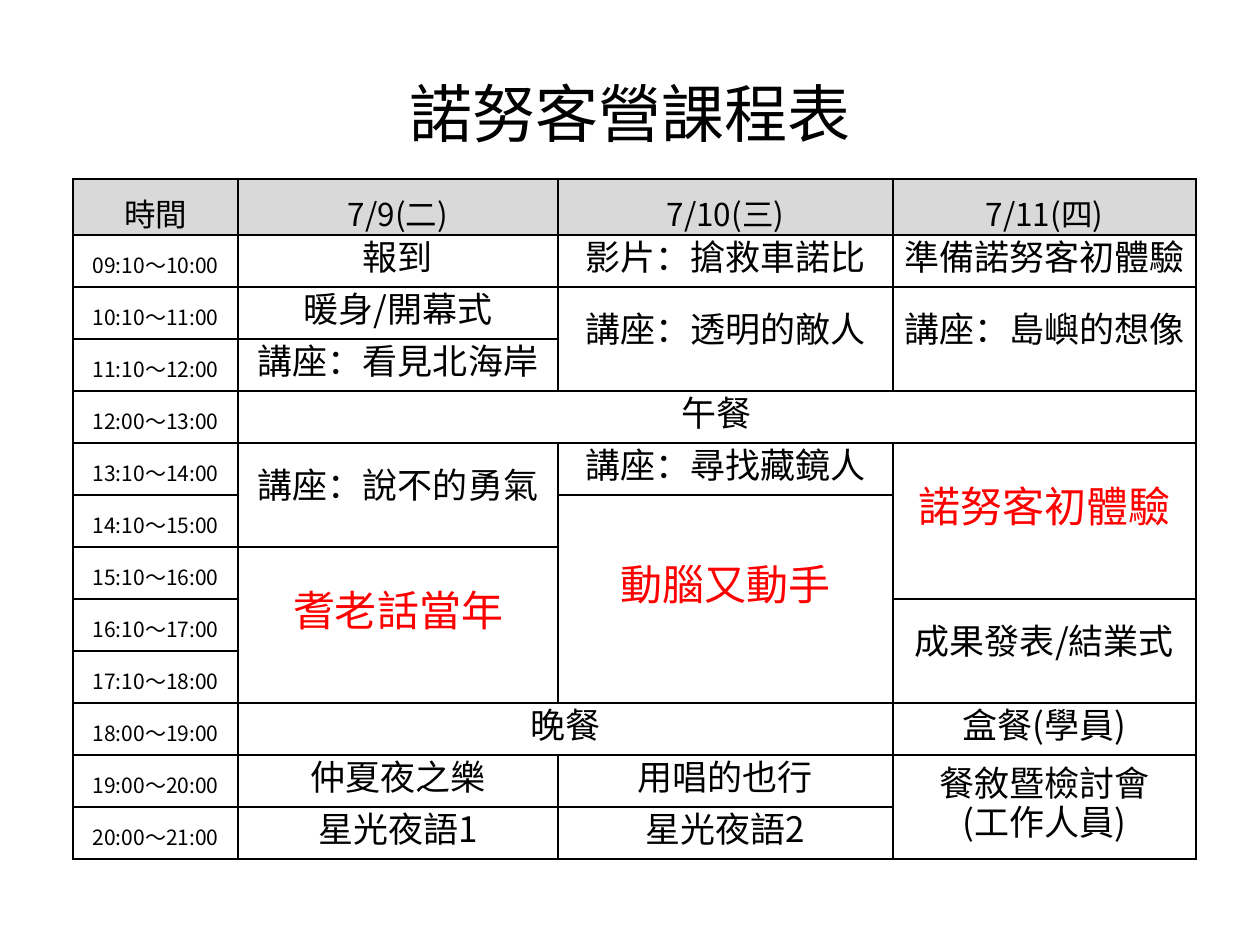
from lxml.etree import SubElement
from pptx import Presentation
from pptx.dml.color import RGBColor
from pptx.enum.text import MSO_ANCHOR, MSO_AUTO_SIZE, PP_ALIGN
from pptx.oxml import parse_xml
from pptx.oxml.ns import nsdecls, qn
from pptx.util import Pt

SCALE = 914400 / 126
BLACK = RGBColor(0, 0, 0)
RED = RGBColor(255, 0, 0)
GRAY = RGBColor(0xD9, 0xD9, 0xD9)
NOTO = "Noto Sans CJK SC"
CAL = "Calibri"

COLS = [165, 320, 335, 303]
ROWS = [56] + [52] * 12
THICK_COLS = {0, 1, len(COLS)}
THICK_ROWS = {0, 1, len(ROWS)}

HEADS = ["時間", "7/9(二)", "7/10(三)", "7/11(四)"]
TIMES = [
    "09:10～10:00", "10:10～11:00", "11:10～12:00", "12:00～13:00",
    "13:10～14:00", "14:10～15:00", "15:10～16:00", "16:10～17:00",
    "17:10～18:00", "18:00～19:00", "19:00～20:00", "20:00～21:00",
]
# row, column, rows spanned, columns spanned, line pitch, text ("|" parts runs)
EVENTS = [
    (1, 1, 1, 1, 23, "報到"),
    (1, 2, 1, 1, 23, "影片：搶救車諾比"),
    (1, 3, 1, 1, 23, "準備諾努客初體驗"),
    (2, 1, 1, 1, 22, "暖身|/|開幕式"),
    (2, 2, 2, 1, 16, "講座：透明的敵人"),
    (2, 3, 2, 1, 16, "講座：島嶼的想像"),
    (3, 1, 1, 1, 22, "講座：看見北海岸"),
    (4, 1, 1, 3, 23, "午餐"),
    (5, 1, 2, 1, 16, "講座：說不的勇氣"),
    (5, 2, 1, 1, 23, "講座：尋找藏鏡人"),
    (5, 3, 3, 1, 16, "諾努客初體驗"),
    (6, 2, 4, 1, 16, "動腦又動手"),
    (7, 1, 3, 1, 16, "耆老話當年"),
    (8, 3, 2, 1, 16, "成果發表|/|結業式"),
    (10, 1, 1, 2, 23, "晚餐"),
    (10, 3, 1, 1, 23, "盒餐(學員)"),
    (11, 1, 1, 1, 23, "仲夏夜之樂"),
    (11, 2, 1, 1, 23, "用唱的也行"),
    (11, 3, 2, 1, 22, "餐敘暨檢討會\n(工作人員)"),
    (12, 1, 1, 1, 23, "星光夜語1"),
    (12, 2, 1, 1, 23, "星光夜語2"),
]
MAIN = {"諾努客初體驗", "動腦又動手", "耆老話當年"}


def px(n):
    return round(n * SCALE)


def add_run(para, text, size, face, color):
    run = para.add_run()
    run.text = text
    font = run.font
    font.size = Pt(size)
    font.name = face
    font.color.rgb = color
    SubElement(font._element, qn("a:ea")).set("typeface", NOTO)


def write(frame, text, size, face, color=BLACK, pitch=None):
    for i, line in enumerate(text.split("\n")):
        para = frame.add_paragraph() if i else frame.paragraphs[0]
        para.alignment = PP_ALIGN.CENTER
        para.line_spacing = pitch
        for part in line.split("|"):
            add_run(para, part, size, NOTO if part == "/" else face, color)


def add_title(slide):
    box = slide.shapes.add_textbox(px(394), px(68), px(471), px(89))
    frame = box.text_frame
    frame.word_wrap = False
    frame.auto_size = MSO_AUTO_SIZE.SHAPE_TO_FIT_TEXT
    write(frame, "諾努客營課程表", 36, NOTO)


def add_grid(slide):
    shape = slide.shapes.add_table(
        len(ROWS), len(COLS), px(73), px(179), px(sum(COLS)), px(sum(ROWS)))
    table = shape.table
    table.first_row = table.horz_banding = False
    for col, width in zip(table.columns, COLS):
        col.width = px(width)
    for row, height in zip(table.rows, ROWS):
        row.height = px(height)
    return table


def set_borders(cell, row, col):
    """Outer lines and the lines beside the headings are thicker."""
    edges = [
        ("L", col in THICK_COLS),
        ("R", col + cell.span_width in THICK_COLS),
        ("T", row in THICK_ROWS),
        ("B", row + cell.span_height in THICK_ROWS),
    ]
    props = cell._tc.get_or_add_tcPr()
    for i, (side, thick) in enumerate(edges):
        width = Pt(1.5 if thick else 1)
        props.insert(i, parse_xml(
            f'<a:ln{side} {nsdecls("a")} w="{width}"><a:solidFill>'
            f'<a:srgbClr val="{BLACK}"/></a:solidFill></a:ln{side}>'))


def style_cells(table):
    for row in range(len(ROWS)):
        for col in range(len(COLS)):
            cell = table.cell(row, col)
            if row:
                cell.fill.background()
            else:
                cell.fill.solid()
                cell.fill.fore_color.rgb = GRAY
            cell.vertical_anchor = MSO_ANCHOR.MIDDLE
            cell.margin_left = cell.margin_right = px(9)
            cell.margin_top = cell.margin_bottom = 0
            if not cell.is_spanned:
                # A lone cell reports a span of one
                set_borders(cell, row, col)


def fill_heads(table):
    for col, text in enumerate(HEADS):
        face = NOTO if col else CAL
        write(table.cell(0, col).text_frame, text, 18, face, pitch=1.25)
    for row, text in enumerate(TIMES, 1):
        write(table.cell(row, 0).text_frame, text, 12, NOTO, pitch=1.25)


def fill_events(table):
    for row, col, high, wide, pitch, text in EVENTS:
        cell = table.cell(row, col)
        if high * wide > 1:
            cell.merge(table.cell(row + high - 1, col + wide - 1))
        size, color = (24, RED) if text in MAIN else (20, BLACK)
        face = CAL if row < 10 else NOTO
        write(cell.text_frame, text, size, face, color, Pt(pitch))


def main():
    deck = Presentation()
    deck.slide_width, deck.slide_height = px(1260), px(945)
    slide = deck.slides.add_slide(deck.slide_layouts[6])
    add_title(slide)
    table = add_grid(slide)
    fill_heads(table)
    fill_events(table)
    style_cells(table)
    deck.save("out.pptx")


if __name__ == "__main__":
    main()
